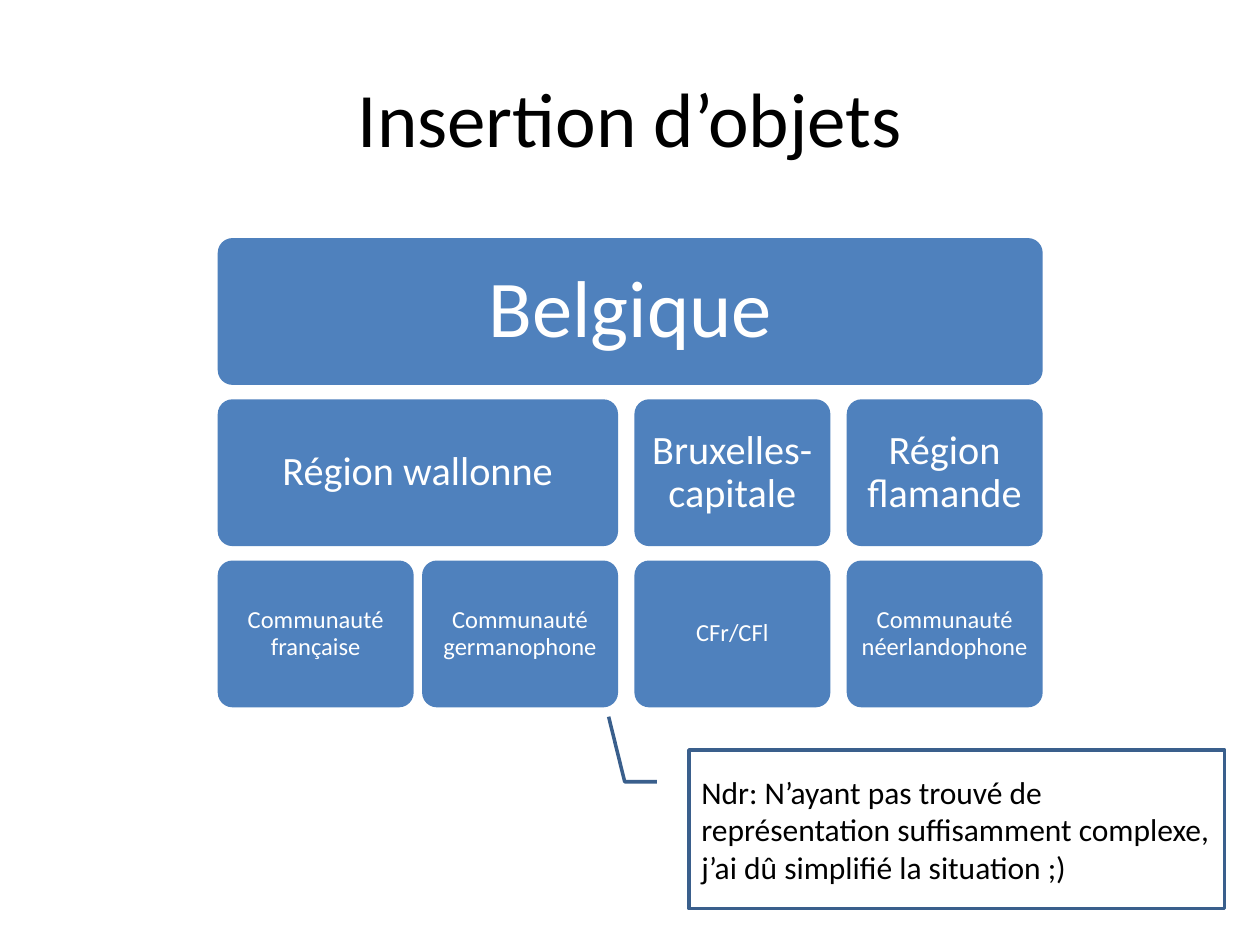
import pptx
import pptx.util
import pptx.dml.color
import pptx.enum.shapes
import pptx.enum.text
from pptx.util import Cm, Pt

COLORS = {"box": "4F81BD", "border": "3A5F8C", "light": "FFFFFF", "dark": "000000"}
SHAPES = pptx.enum.shapes.MSO_SHAPE
ALIGN = pptx.enum.text.PP_ALIGN
MIDDLE = pptx.enum.text.MSO_ANCHOR.MIDDLE

LEFT, TOP = 4.39, 4.8
BOX_W, BOX_H = 3.95, 2.96
SIBLING_GAP, GROUP_GAP, ROW_GAP = 0.17, 0.33, 0.29

LEVELS = [
    (46, 0.49, [("Belgique", 0, 3)]),
    (23, 0.24, [("Région wallonne", 0, 1), ("Bruxelles-capitale", 2, 2),
                ("Région flamande", 3, 3)]),
    (14, 0.15, [("Communauté française", 0, 0), ("Communauté germanophone", 1, 1),
                ("CFr/CFl", 2, 2), ("Communauté néerlandophone", 3, 3)]),
]


def rgb(name):
    return pptx.dml.color.RGBColor.from_string(COLORS[name])


def set_attrs(obj, values):
    for name, value in values.items():
        setattr(obj, name, value)


def write_text(sp, text, size, color, align, frame=None, paragraph=None):
    tf = sp.text_frame
    set_attrs(tf, {"word_wrap": True, "vertical_anchor": MIDDLE, **(frame or {})})
    p = tf.paragraphs[0]
    set_attrs(p, {"alignment": align, **(paragraph or {})})
    r = p.add_run()
    r.text = text
    set_attrs(r.font, {"name": "Calibri", "size": Pt(size)})
    r.font.color.rgb = rgb(color)


def add_title(s, text):
    sp = s.shapes.title
    set_attrs(sp, {"left": Cm(1.27), "top": Cm(0.76),
                   "width": Cm(22.86), "height": Cm(3.18)})
    write_text(sp, text, 44, "dark", ALIGN.CENTER)


def add_box(s, text, x, y, w, size, inset):
    sp = s.shapes.add_shape(SHAPES.ROUNDED_RECTANGLE, Cm(x), Cm(y), Cm(w), Cm(BOX_H))
    sp.adjustments[0] = 0.1
    sp.shadow.inherit = False
    sp.fill.solid()
    sp.fill.fore_color.rgb = rgb("box")
    sp.line.fill.background()
    sides = ("left", "top", "right", "bottom")
    write_text(sp, text, size, "light", ALIGN.CENTER,
               {f"margin_{side}": Cm(inset) for side in sides},
               {"line_spacing": 0.9})


def add_hierarchy(s):
    columns = [LEFT]
    for gap in (SIBLING_GAP, GROUP_GAP, GROUP_GAP):
        columns.append(columns[-1] + BOX_W + gap)
    for row, (size, inset, boxes) in enumerate(LEVELS):
        y = TOP + row * (BOX_H + ROW_GAP)
        for text, first, last in boxes:
            w = columns[last] + BOX_W - columns[first]
            add_box(s, text, columns[first], y, w, size, inset)


def add_callout(s, text):
    sp = s.shapes.add_shape(SHAPES.LINE_CALLOUT_2, Cm(13.89), Cm(15.12),
                            Cm(10.8), Cm(3.2))
    for i, value in enumerate((0.2, -0.06, 0.2, -0.12, -0.21, -0.15)):
        sp.adjustments[i] = value
    sp.shadow.inherit = False
    sp.fill.background()
    sp.line.color.rgb = rgb("border")
    sp.line.width = Pt(2)
    write_text(sp, text, 18, "dark", ALIGN.LEFT)


def main():
    prs = pptx.Presentation()
    set_attrs(prs, {"slide_width": Cm(25.4), "slide_height": Cm(19.05)})
    s = prs.slides.add_slide(prs.slide_layouts[5])
    add_title(s, "Insertion d’objets")
    add_hierarchy(s)
    add_callout(s, "Ndr: N’ayant pas trouvé de représentation suffisamment "
                   "complexe, j’ai dû simplifié la situation ;)")
    prs.save("out.pptx")


if __name__ == "__main__":
    main()
